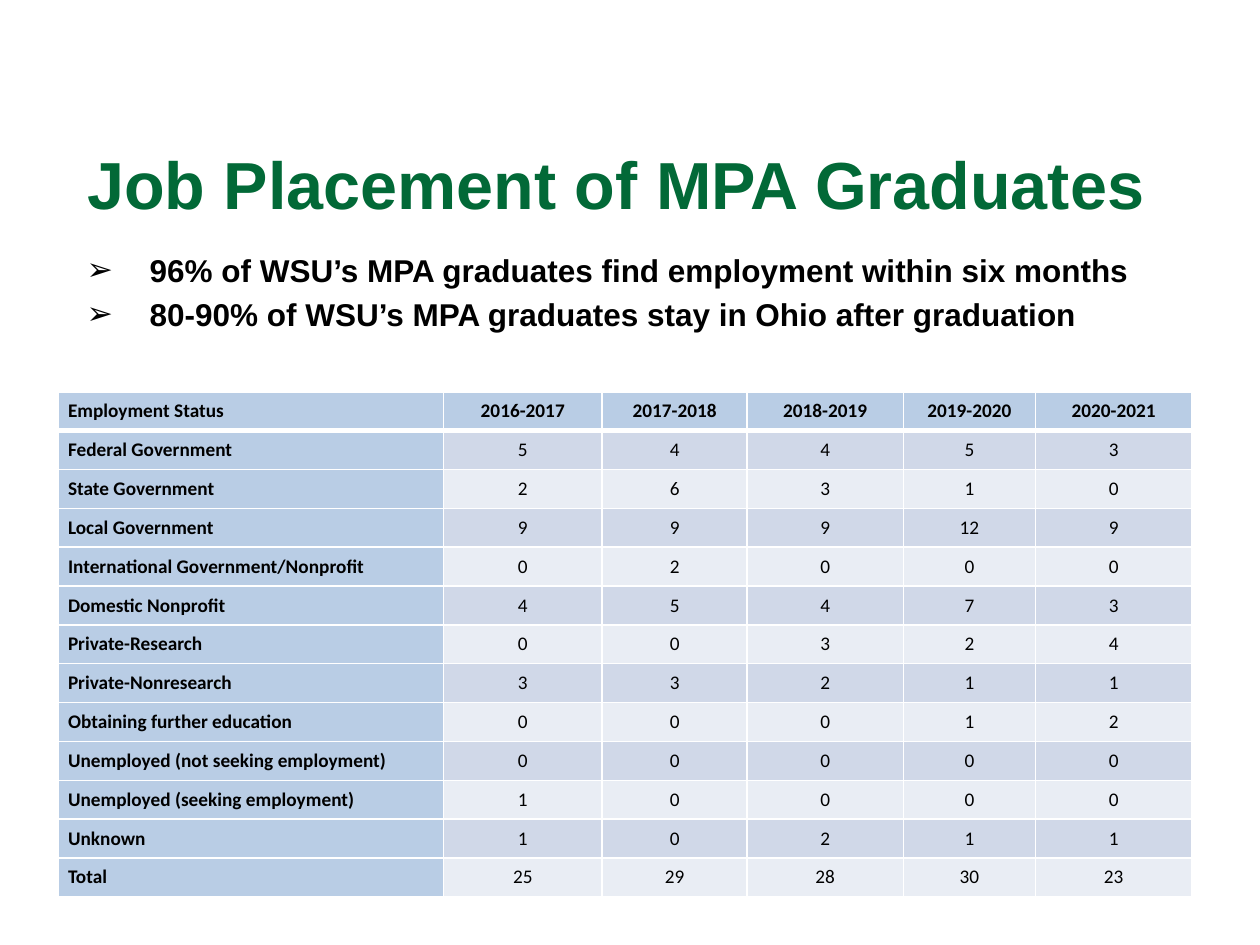
from lxml.etree import SubElement
from pptx import Presentation
from pptx.dml.color import RGBColor
from pptx.enum.text import MSO_ANCHOR, PP_ALIGN
from pptx.oxml import parse_xml
from pptx.oxml.ns import nsdecls, qn
from pptx.util import Inches, Pt

GREEN = RGBColor(0x02, 0x69, 0x37)
BLACK = RGBColor(0x00, 0x00, 0x00)
HEADER_BLUE = RGBColor(0xB9, 0xCD, 0xE5)
BAND_DARK = RGBColor(0xD0, 0xD8, 0xE8)
BAND_LIGHT = RGBColor(0xE9, 0xED, 0xF4)
WHITE = RGBColor(0xFF, 0xFF, 0xFF)

COLUMN_WIDTHS = [3.06, 1.26, 1.15, 1.24, 1.05, 1.24]
TABLE_HEIGHT = 4.01
TITLE = "Job Placement of MPA Graduates"
BULLETS = [
    "96% of WSU’s MPA graduates find employment within six months",
    "80-90% of WSU’s MPA graduates stay in Ohio after graduation",
]
PLACEMENTS = [
    ("Employment Status", "2016-2017", "2017-2018", "2018-2019", "2019-2020", "2020-2021"),
    ("Federal Government", 5, 4, 4, 5, 3),
    ("State Government", 2, 6, 3, 1, 0),
    ("Local Government", 9, 9, 9, 12, 9),
    ("International Government/Nonprofit", 0, 2, 0, 0, 0),
    ("Domestic Nonprofit", 4, 5, 4, 7, 3),
    ("Private-Research", 0, 0, 3, 2, 4),
    ("Private-Nonresearch", 3, 3, 2, 1, 1),
    ("Obtaining further education", 0, 0, 0, 1, 2),
    ("Unemployed (not seeking employment)", 0, 0, 0, 0, 0),
    ("Unemployed (seeking employment)", 1, 0, 0, 0, 0),
    ("Unknown", 1, 0, 2, 1, 1),
    ("Total", 25, 29, 28, 30, 23),
]


def write(para, text, size=18, font="Arial", color=BLACK, bold=True, align=PP_ALIGN.LEFT):
    """Add one formatted span to a paragraph."""
    para.alignment = align
    span = para.add_run()
    span.text = text
    span.font.size = Pt(size)
    span.font.name = font
    span.font.color.rgb = color
    span.font.bold = bold


def add_box(page, left, top, width, height):
    box = page.shapes.add_textbox(Inches(left), Inches(top), Inches(width), Inches(height))
    box.text_frame.word_wrap = True
    return box.text_frame


def add_title(page):
    frame = add_box(page, 0, 0.65, 9.78, 1.61)
    frame.vertical_anchor = MSO_ANCHOR.MIDDLE
    write(frame.paragraphs[0], TITLE, size=38, color=GREEN, align=PP_ALIGN.CENTER)


def add_bullets(page):
    frame = add_box(page, 0.59, 1.58, 10.03, 1.43)
    frame.margin_top = Inches(0.41)
    for index, text in enumerate(BULLETS):
        para = frame.add_paragraph() if index else frame.paragraphs[0]
        if index:
            para.space_before = Pt(3.6)
        properties = para._p.get_or_add_pPr()
        properties.set("marL", str(Inches(0.5)))
        properties.set("indent", str(-Inches(0.5)))
        SubElement(properties, qn("a:buFont"), typeface="Arial")
        SubElement(properties, qn("a:buChar"), char="➢")
        write(para, text)


def set_borders(cell, bottom):
    """Draw white rules, ahead of the fill as the schema asks."""
    properties = cell._tc.get_or_add_tcPr()
    sides = [("L", 1), ("R", 1), ("T", 1), ("B", bottom)]
    for index, (side, width) in enumerate(sides):
        properties.insert(index, parse_xml(
            f'<a:ln{side} {nsdecls("a")} w="{Pt(width)}"><a:solidFill>'
            f'<a:srgbClr val="{WHITE}"/></a:solidFill></a:ln{side}>'))


def fill_cell(cell, value, row, column):
    heading = row == 0 or column == 0
    band = BAND_DARK if row % 2 else BAND_LIGHT
    cell.fill.solid()
    cell.fill.fore_color.rgb = HEADER_BLUE if heading else band
    cell.margin_left = cell.margin_right = Inches(0.08)
    cell.margin_top = cell.margin_bottom = Inches(0.06)
    write(cell.text_frame.paragraphs[0], str(value), size=11, font="Calibri",
          bold=heading, align=PP_ALIGN.CENTER if column else PP_ALIGN.LEFT)
    set_borders(cell, bottom=1 if row else 3)


def add_placements(page):
    row_count = len(PLACEMENTS)
    table = page.shapes.add_table(
        row_count, len(COLUMN_WIDTHS), Inches(0.46), Inches(3.11),
        Inches(sum(COLUMN_WIDTHS)), Inches(TABLE_HEIGHT)).table
    table.first_row = table.horz_banding = False
    for column, width in zip(table.columns, COLUMN_WIDTHS):
        column.width = Inches(width)
    for row, values in enumerate(PLACEMENTS):
        table.rows[row].height = Inches(TABLE_HEIGHT / row_count)
        for column, value in enumerate(values):
            fill_cell(table.cell(row, column), value, row, column)


def main():
    deck = Presentation()
    deck.slide_width, deck.slide_height = Inches(10), Inches(7.5)
    page = deck.slides.add_slide(deck.slide_layouts[6])
    # Heading and key facts
    add_title(page)
    add_bullets(page)
    # Graduates by employer and year
    add_placements(page)
    deck.save("out.pptx")


if __name__ == "__main__":
    main()
